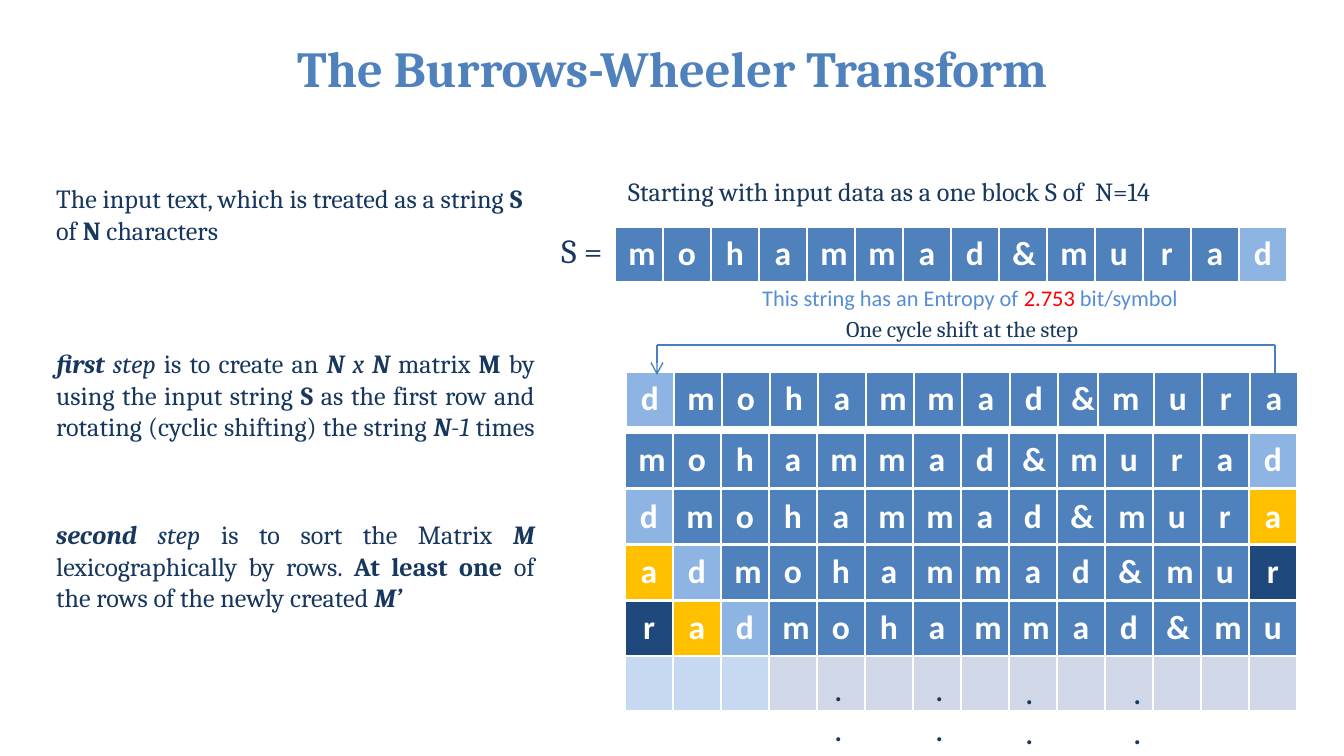
from dataclasses import dataclass

from lxml.etree import SubElement
from pptx import Presentation
from pptx.dml.color import RGBColor
from pptx.enum.shapes import MSO_CONNECTOR
from pptx.enum.text import MSO_ANCHOR, MSO_AUTO_SIZE, PP_ALIGN
from pptx.oxml.ns import qn
from pptx.util import Emu, Pt

COLORS = {
    "blue": "4F81BD", "light": "8EB4E3", "gold": "FFC000", "navy": "1F497D",
    "pale": "C6D9F1", "grey": "D0D8E8", "ink": "17375E", "white": "FFFFFF",
    "line": "4B7EBC", "sky": "558ED5", "red": "FF0000",
}
WORD = "mohammad&murad"
SIZE = len(WORD)
CELL = 48
ROW = 55
STEP = 56


@dataclass
class Run:
    text: str
    style: str = ""  # "b" bold, "i" italic
    color: str = "ink"


@dataclass
class Note:
    x: int
    y: int
    w: int
    h: int
    lines: list[list[Run]]
    size: int = 14
    font: str = "Cambria"
    align: PP_ALIGN = PP_ALIGN.LEFT
    wrap: bool = True


@dataclass
class Strip:
    x: int
    y: int
    shift: int
    marks: int  # how many trailing letters of the word are highlighted
    height: int = ROW
    blank: bool = False  # adds an unfilled row below


def px(n: int) -> Emu:
    return Emu(round(n * 9144000 / 1344))


def rgb(name: str) -> RGBColor:
    return RGBColor.from_string(COLORS[name])


def add_run(para, run: Run, size: int, font: str) -> None:
    part = para.add_run()
    part.text = run.text
    part.font.size = Pt(size)
    part.font.name = font
    part.font.bold = "b" in run.style
    part.font.italic = "i" in run.style
    part.font.color.rgb = rgb(run.color)


def add_note(slide, note: Note) -> None:
    box = slide.shapes.add_textbox(px(note.x), px(note.y), px(note.w), px(note.h))
    frame = box.text_frame
    frame.word_wrap = note.wrap
    frame.auto_size = MSO_AUTO_SIZE.SHAPE_TO_FIT_TEXT
    for i, runs in enumerate(note.lines):
        para = frame.add_paragraph() if i else frame.paragraphs[0]
        para.alignment = note.align
        for run in runs:
            add_run(para, run, note.size, note.font)


def add_strip(slide, strip: Strip):
    rows = 2 if strip.blank else 1
    table = slide.shapes.add_table(
        rows, SIZE, px(strip.x), px(strip.y),
        px(CELL * SIZE), px(strip.height * rows)).table
    tints = ["light", "gold", "navy"][:strip.marks]
    for col in table.columns:
        col.width = px(CELL)
    for i in range(SIZE):
        src = (i - strip.shift) % SIZE
        back = SIZE - 1 - src
        cell = table.cell(0, i)
        cell.fill.solid()
        cell.fill.fore_color.rgb = rgb(tints[back] if back < len(tints) else "blue")
        cell.vertical_anchor = MSO_ANCHOR.MIDDLE
        para = cell.text_frame.paragraphs[0]
        para.alignment = PP_ALIGN.CENTER
        add_run(para, Run(WORD[src], "b", "white"), 18, "Calibri")
        if strip.blank:
            cell = table.cell(1, i)
            cell.fill.solid()
            cell.fill.fore_color.rgb = rgb("pale" if i < 3 else "grey")
    return table


def add_line(slide, x1: int, y1: int, x2: int, y2: int, arrow: bool = False) -> None:
    line = slide.shapes.add_connector(
        MSO_CONNECTOR.STRAIGHT, px(x1), px(y1), px(x2), px(y2))
    line.line.width = Pt(0.75)
    line.line.color.rgb = rgb("line")
    props = line.element.spPr
    if arrow:
        SubElement(props.find(qn("a:ln")), qn("a:tailEnd"), type="arrow")
    SubElement(props, qn("a:effectLst"))


def add_title(slide, text: str) -> None:
    title = slide.shapes.title
    title.left, title.top, title.width, title.height = map(px, (67, 20, 1210, 126))
    frame = title.text_frame
    frame.vertical_anchor = MSO_ANCHOR.MIDDLE
    frame.margin_bottom = px(38)
    para = frame.paragraphs[0]
    para.alignment = PP_ALIGN.CENTER
    add_run(para, Run(text, "b", "blue"), 27, "Cambria")


NOTES = [
    # Explanations on the left
    Note(43, 176, 505, 77, [[
        Run("The input text, which is treated as a string "), Run("S", "b"),
        Run(" of "), Run("N", "b"), Run(" characters")]]),
    Note(43, 341, 505, 140, [[
        Run("first", "bi"), Run(" step ", "i"), Run("is to create an "),
        Run("N ", "bi"), Run("x ", "i"), Run("N ", "bi"), Run("matrix "),
        Run("M ", "b"), Run("by using the input string "), Run("S ", "b"),
        Run("as the first row and rotating (cyclic shifting) the string "),
        Run("N", "bi"), Run("-1 ", "i"), Run("times ")]],
        align=PP_ALIGN.JUSTIFY),
    Note(43, 512, 505, 109, [[
        Run("second", "bi"), Run(" step ", "i"), Run("is to sort the Matrix "),
        Run("M ", "bi"), Run("lexicographically by rows. "),
        Run("At least one", "b"), Run(" of the rows of the newly created "),
        Run("M’ ", "bi")]], align=PP_ALIGN.JUSTIFY),
    # Labels around the strips
    Note(615, 169, 646, 46, [[Run("Starting with input data as a one block S of  N=14")]]),
    Note(548, 223, 70, 54, [[Run("S =")]], size=18, wrap=False),
    Note(749, 278, 461, 40, [[
        Run("This string has an Entropy of ", color="sky"),
        Run("2.753", color="red"), Run(" bit/symbol", color="sky")]],
        size=12, font="Calibri"),
    Note(833, 309, 388, 40, [[Run("One cycle shift at the step")]], size=12),
]
DOTS = [(821, 661), (922, 661), (1012, 664), (1120, 664)]


def main() -> None:
    deck = Presentation()
    deck.slide_width, deck.slide_height = px(1344), px(756)
    slide = deck.slides.add_slide(deck.slide_layouts[5])
    add_title(slide, "The Burrows-Wheeler Transform")

    # Input string and its first shift
    add_strip(slide, Strip(615, 227, 0, 1, 54))
    shifted = add_strip(slide, Strip(626, 372, 1, 1, 54))
    shifted.columns[9].width = px(40)
    shifted.columns[10].width = px(56)

    # Rows of the rotation matrix
    for k in range(4):
        add_strip(slide, Strip(625, 433 + STEP * k, k, k + 1, blank=k == 3))

    # Bracket from the last letter to the first
    add_line(slide, 657, 345, 657, 375, arrow=True)
    add_line(slide, 657, 345, 1275, 345)
    add_line(slide, 1275, 345, 1275, 375)

    for note in NOTES:
        add_note(slide, note)

    # Dots for the remaining rows
    for x, y in DOTS:
        add_note(slide, Note(x, y, 63, 95, [[Run(".")], [Run(".")]], 18, "Calibri"))

    deck.save("out.pptx")


if __name__ == "__main__":
    main()
